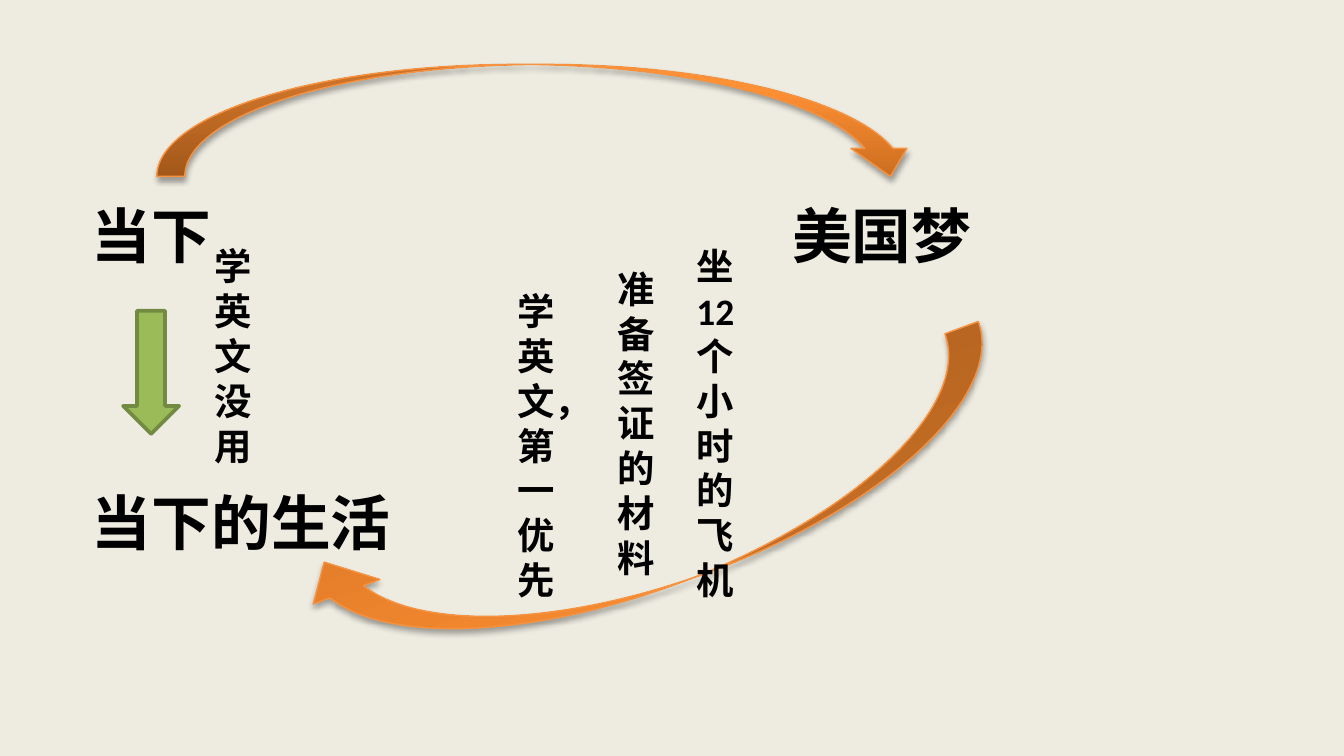
from dataclasses import dataclass

from pptx import Presentation
from pptx.dml.color import RGBColor as Rgb
from pptx.enum.shapes import MSO_SHAPE as Kind
from pptx.enum.text import MSO_ANCHOR as Anchor, MSO_AUTO_SIZE as Fit, PP_ALIGN as Align
from pptx.oxml import parse_xml
from pptx.oxml.ns import nsdecls
from pptx.util import Inches, Pt


@dataclass(frozen=True)
class Theme:
    """Colours, font and type sizes of the slide."""
    back: str = "EEECE1"
    ink: str = "000000"
    leaf: str = "9BBB59"
    moss: str = "738A42"
    edge: str = "F69240"
    glow: tuple = ((0, "CC6E20"), (80, "FF9034"), (100, "FF9136"))
    font: str = "Calibri"
    big: int = 32
    small: int = 20


class Deck:
    """Draws on one slide with a grid of 120 columns by 67.5 rows."""

    def __init__(self, theme):
        """Open a slide with a title and a plain background."""
        self.theme = theme
        self.deck = Presentation()
        self.deck.slide_width = Inches(10)
        self.deck.slide_height = Inches(5.625)
        self.unit = self.deck.slide_width / 120
        self.slide = self.deck.slides.add_slide(self.deck.slide_layouts[5])
        fill = self.slide.background.fill
        fill.solid()
        fill.fore_color.rgb = Rgb.from_string(theme.back)

    def span(self, *cells):
        """Turn grid cells into lengths."""
        return [round(cell * self.unit) for cell in cells]

    def style(self, frame, size):
        """Format all text of a frame."""
        frame.word_wrap = True
        frame.auto_size = Fit.NONE
        frame.vertical_anchor = Anchor.MIDDLE
        for para in frame.paragraphs:
            para.alignment = Align.LEFT
            for run in para.runs:
                run.font.name = self.theme.font
                run.font.size = Pt(size)
                run.font.bold = True
                run.font.color.rgb = Rgb.from_string(self.theme.ink)

    def title(self, text, cells, stop, gap):
        """Set the title with a tab stop and a gap between its lines."""
        shape = self.slide.shapes.title
        shape.left, shape.top, shape.width, shape.height = self.span(*cells)
        frame = shape.text_frame
        frame.text = text
        self.style(frame, self.theme.big)
        first, last = frame.paragraphs
        last.space_before = Pt(gap)
        first._p.get_or_add_pPr().append(parse_xml(
            f'<a:tabLst {nsdecls("a")}><a:tab pos="{Inches(stop)}" algn="l"/></a:tabLst>'))

    def note(self, text, left, top):
        """Add a narrow column of characters."""
        box = self.slide.shapes.add_textbox(*self.span(left, top, 6, 22))
        box.text_frame.text = text
        self.style(box.text_frame, self.theme.small)

    def shape(self, kind, cells, line, width):
        """Add an outlined shape without shadow."""
        shape = self.slide.shapes.add_shape(kind, *self.span(*cells))
        shape.shadow.inherit = False
        shape.line.color.rgb = Rgb.from_string(line)
        shape.line.width = Pt(width)
        return shape

    def arrow(self, cells):
        """Add a plain arrow that points down."""
        shape = self.shape(Kind.DOWN_ARROW, cells, self.theme.moss, 2)
        shape.fill.solid()
        shape.fill.fore_color.rgb = Rgb.from_string(self.theme.leaf)

    def curve(self, cells, turn=0):
        """Add a curved arrow with a gradient and a soft shadow."""
        shape = self.shape(Kind.CURVED_DOWN_ARROW, cells, self.theme.edge, 0.75)
        shape.rotation = turn
        shape.fill.background()
        stops = "".join(f'<a:gs pos="{pos * 1000}"><a:srgbClr val="{tone}"/></a:gs>'
                        for pos, tone in self.theme.glow)
        props = shape._element.spPr
        props.replace(props.find("{*}noFill"), parse_xml(
            f'<a:gradFill {nsdecls("a")} rotWithShape="1"><a:gsLst>{stops}</a:gsLst>'
            '<a:lin ang="16200000" scaled="0"/></a:gradFill>'))
        props.find("{*}effectLst").append(parse_xml(
            f'<a:outerShdw {nsdecls("a")} blurRad="{Pt(3.1)}" dist="{Pt(1.8)}" dir="5400000"'
            f' rotWithShape="0"><a:srgbClr val="{self.theme.ink}"><a:alpha val="35000"/>'
            '</a:srgbClr></a:outerShdw>'))


def main():
    """Build and save the slide."""
    deck = Deck(Theme())
    deck.title("当下\t美国梦\n当下的生活", (7, 0, 113, 67.5), 5.21, 115)
    deck.curve((14, 5.75, 68, 10))
    deck.curve((26.15, 39.6, 65.4, 12.7), 159.8)
    deck.arrow((11, 27.75, 5, 11))
    for text, left, top in (("学英文没用", 18, 20.75), ("学英文，第一优先", 45, 28.75),
                            ("准备签证的材料", 54, 26.75), ("坐12个小时的飞机", 61, 26.75)):
        deck.note(text, left, top)
    deck.deck.save("out.pptx")


if __name__ == "__main__":
    main()
